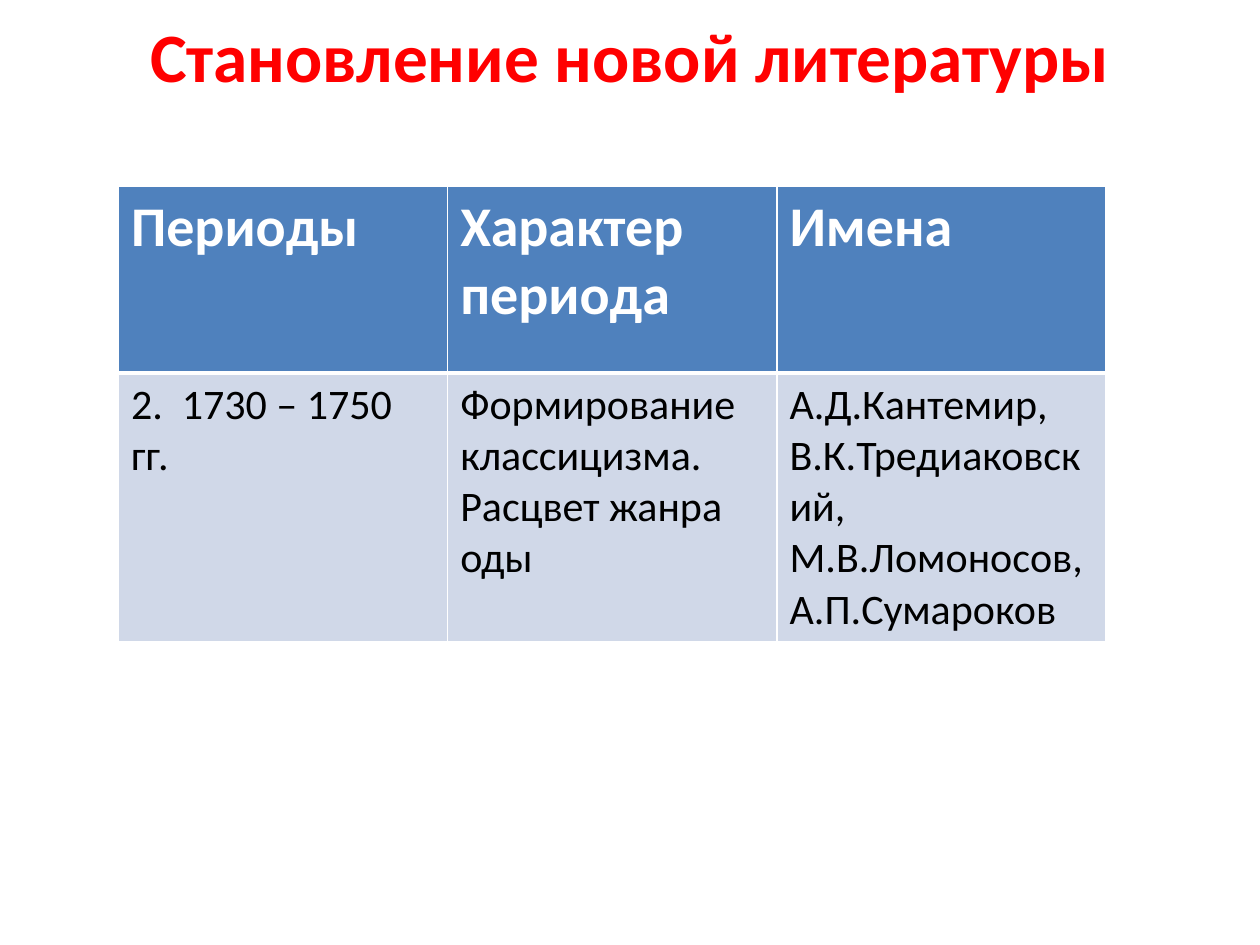
from dataclasses import dataclass

from lxml import etree
from pptx import Presentation
from pptx.dml.color import RGBColor
from pptx.enum import text
from pptx.oxml import ns
from pptx.util import Inches, Pt

RED = RGBColor(0xFF, 0x00, 0x00)
WHITE = RGBColor(0xFF, 0xFF, 0xFF)
BLACK = RGBColor(0x00, 0x00, 0x00)
BLUE = RGBColor(0x4F, 0x81, 0xBD)
PALE = RGBColor(0xD0, 0xD8, 0xE8)
FONT = "Calibri"


@dataclass
class Row:
    texts: tuple[str, ...]
    height: float
    size: float
    ink: RGBColor
    fill: RGBColor
    bold: bool
    base: float  # width of the bottom border in points


ROWS = (
    Row(("Периоды", "Характер периода", "Имена"),
        1.48, 32, WHITE, BLUE, True, 3),
    Row(("2.  1730 – 1750 гг.",
         "Формирование классицизма. Расцвет жанра оды",
         "А.Д.Кантемир, В.К.Тредиаковский, М.В.Ломоносов, А.П.Сумароков"),
        2.12, 24, BLACK, PALE, False, 1),
)


def add_run(para, words: str, size: float, ink: RGBColor, bold: bool) -> None:
    run = para.add_run()
    run.text = words
    run.font.name = FONT
    run.font.size = Pt(size)
    run.font.bold = bold
    run.font.color.rgb = ink


def add_edges(cell, base: float) -> None:
    """Give the cell white borders, the bottom one of width base."""
    props = cell._tc.get_or_add_tcPr()
    widths = {"a:lnL": 1, "a:lnR": 1, "a:lnT": 1, "a:lnB": base}
    for spot, (tag, width) in enumerate(widths.items()):
        line = etree.Element(ns.qn(tag), w=str(Pt(width)))
        fill = etree.SubElement(line, ns.qn("a:solidFill"))
        etree.SubElement(fill, ns.qn("a:srgbClr"), val=str(WHITE))
        props.insert(spot, line)


def add_title(slide) -> None:
    title = slide.shapes.title
    title.left, title.top = Inches(0.5), Inches(0.3)
    title.width, title.height = Inches(9), Inches(0.87)
    frame = title.text_frame
    frame.auto_size = text.MSO_AUTO_SIZE.NONE
    frame.word_wrap = True
    frame.vertical_anchor = text.MSO_ANCHOR.MIDDLE
    frame.margin_top, frame.margin_bottom = 0, Inches(0.6)
    para = frame.paragraphs[0]
    para.alignment = text.PP_ALIGN.CENTER
    add_run(para, "Становление новой литературы", 39.6, RED, True)


def add_periods(slide, rows: tuple[Row, ...]) -> None:
    count = len(rows[0].texts)
    height = sum(row.height for row in rows)
    table = slide.shapes.add_table(
        len(rows), count, Inches(0.94), Inches(1.48),
        Inches(7.84), Inches(height)).table
    for y, row in enumerate(rows):
        table.rows[y].height = Inches(row.height)
        for x, words in enumerate(row.texts):
            cell = table.cell(y, x)
            cell.fill.solid()
            cell.fill.fore_color.rgb = row.fill
            add_edges(cell, row.base)
            add_run(cell.text_frame.paragraphs[0], words,
                    row.size, row.ink, row.bold)


def main() -> None:
    deck = Presentation()
    deck.slide_width, deck.slide_height = Inches(10), Inches(7.5)
    slide = deck.slides.add_slide(deck.slide_layouts[5])
    add_title(slide)
    add_periods(slide, ROWS)
    deck.save("out.pptx")


if __name__ == "__main__":
    main()
